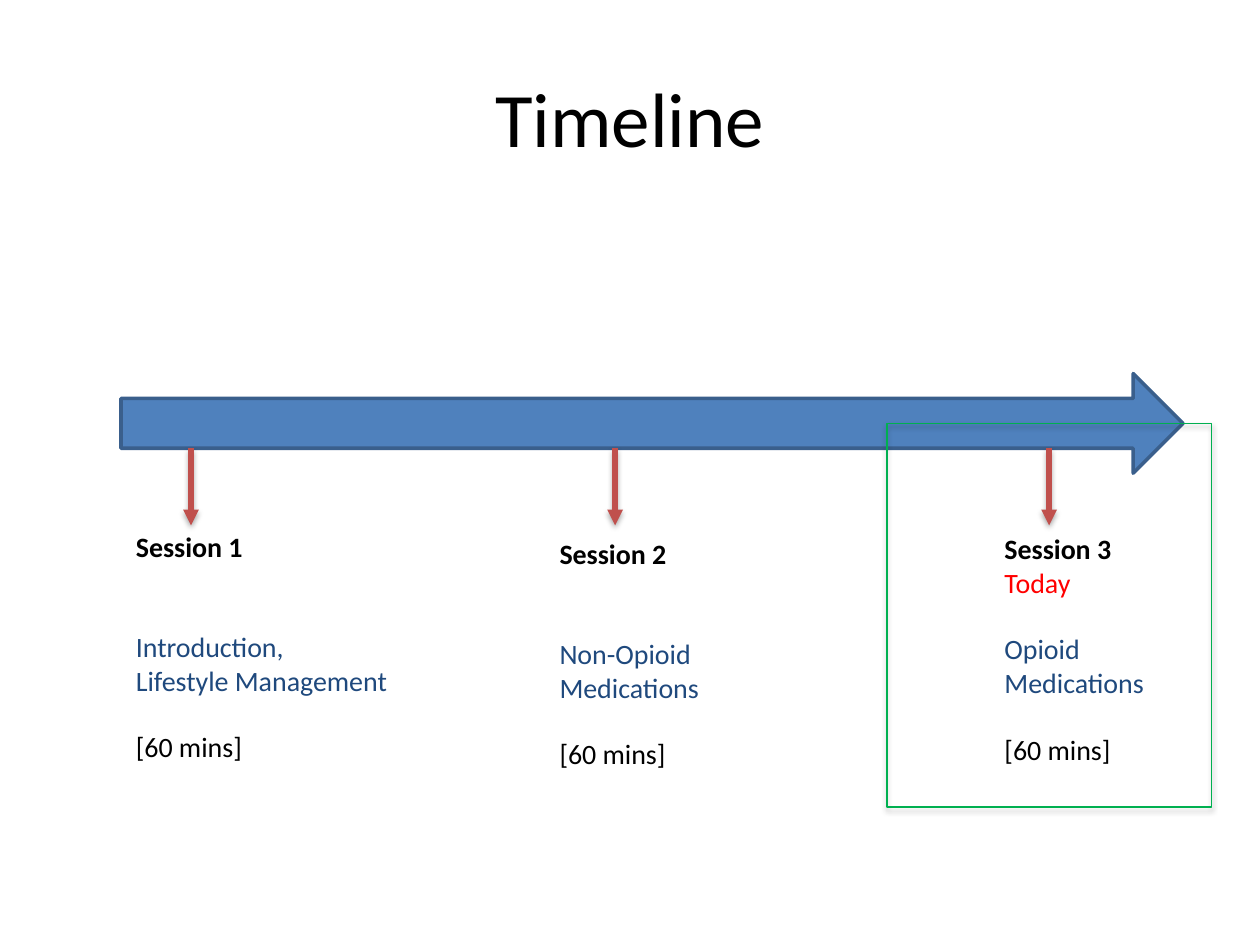
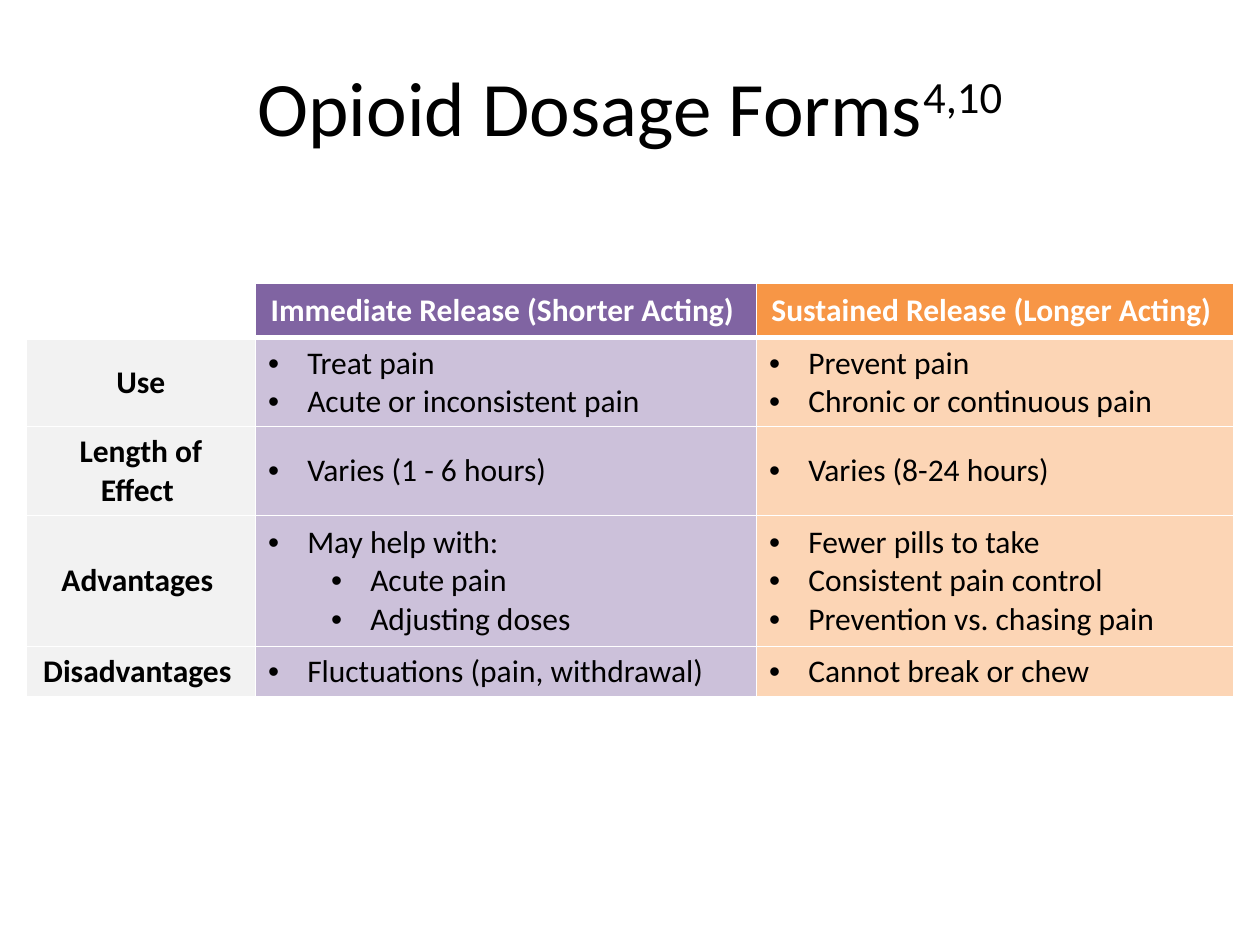
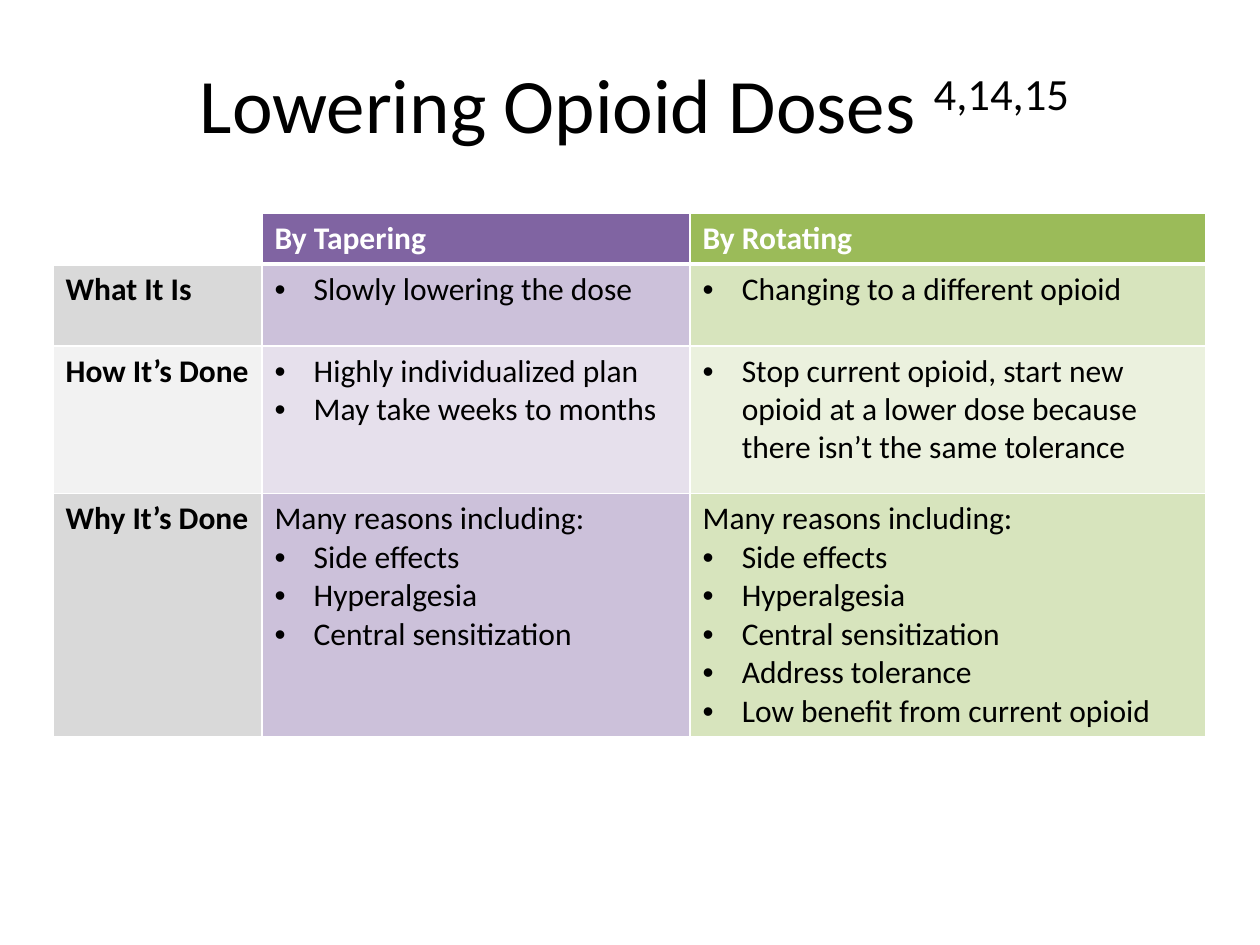
"""Build three slides on opioid treatment: a session timeline and two comparison tables."""
import dataclasses

import lxml.etree
import pptx
import pptx.dml.color
import pptx.enum.shapes
import pptx.enum.text
import pptx.oxml.ns
import pptx.util

Cm = pptx.util.Cm
Pt = pptx.util.Pt
ALIGN = pptx.enum.text.PP_ALIGN
ANCHOR = pptx.enum.text.MSO_ANCHOR
SHAPE = pptx.enum.shapes.MSO_SHAPE
HARD_SPACE = chr(160)


@dataclasses.dataclass(frozen=True)
class Theme:
    font: str = "Calibri"
    title_size: int = 44
    table_size: int = 18
    session_size: int = 16
    line_height: int = 19
    black: str = "000000"
    white: str = "FFFFFF"
    navy: str = "1F497D"
    red: str = "FF0000"
    green: str = "00B050"
    blue: str = "4F81BD"
    blue_edge: str = "3A5F8C"
    marker: str = "C0504D"
    purple: str = "8064A2"
    purple_mid: str = "CCC1DA"
    purple_pale: str = "E6E0EC"
    orange: str = "F79646"
    orange_mid: str = "FCD5B5"
    olive: str = "9BBB59"
    olive_mid: str = "D7E4BD"
    olive_pale: str = "EBF1DE"
    gray_mid: str = "D9D9D9"
    gray_pale: str = "F2F2F2"


THEME = Theme()
PLAIN, BULLET, SUB_BULLET = range(3)
BULLET_MARGIN = {BULLET: Cm(0.79), SUB_BULLET: Cm(2.06)}
BULLET_HANG = Cm(0.79)

TIMELINE_ARROW = (2.44, 7.53, 21.41, 2.01)
TODAY_FRAME = (17.88, 8.54, 6.55, 7.73)
MARKER_TOP, MARKER_BOTTOM = 9.04, 10.59
SESSION_HEIGHT = 5.05

SESSIONS = [
    {"box": (2.49, 10.55, 5.94), "marker": 3.85, "lines": [
        ("Session 1", THEME.black, 0),
        ("Introduction,", THEME.navy, 2),
        ("Lifestyle Management", THEME.navy, 0),
        ("[60 mins]", THEME.black, 1)]},
    {"box": (11.03, 10.69, 3.35), "marker": 12.4, "lines": [
        ("Session 2", THEME.black, 0),
        ("Non-Opioid Medications", THEME.navy, 2),
        ("[60 mins]", THEME.black, 1)]},
    {"box": (20, 10.59, 3.76), "marker": 21.15, "lines": [
        ("Session 3", THEME.black, 0),
        ("Today" + HARD_SPACE, THEME.red, 0),
        ("Opioid Medications", THEME.navy, 1),
        ("[60 mins]", THEME.black, 1)]},
]

DOSAGE_FORMS = {
    "title": ("Opioid Dosage Forms", "4,10"),
    "title_box": (1.27, 0.54, 22.86),
    "corner": (0.53, 5.72),
    "columns": (4.62, 10.1, 9.62),
    "heights": (1.09, 1.79, 1.79, 2.64, 1.02),
    "centered": True,
    "header_fills": (THEME.white, THEME.purple, THEME.orange),
    "band_fills": [(THEME.gray_pale, THEME.purple_mid, THEME.orange_mid)],
    "headers": ("", "Immediate Release (Shorter Acting)" + HARD_SPACE,
                "Sustained Release (Longer Acting)" + HARD_SPACE),
    "rows": [
        ("Use",
         [(BULLET, "Treat pain"), (BULLET, "Acute or inconsistent pain")],
         [(BULLET, "Prevent pain"), (BULLET, "Chronic or continuous pain" + HARD_SPACE)]),
        ("Length of Effect" + HARD_SPACE,
         [(BULLET, "Varies (1 - 6 hours)")],
         [(BULLET, "Varies (8-24 hours)")]),
        ("Advantages" + HARD_SPACE,
         [(BULLET, "May help with:"), (SUB_BULLET, "Acute pain"), (SUB_BULLET, "Adjusting doses")],
         [(BULLET, "Fewer pills to take"), (BULLET, "Consistent pain control"),
          (BULLET, "Prevention vs. chasing pain")]),
        ("Disadvantages" + HARD_SPACE,
         [(BULLET, "Fluctuations (pain, withdrawal)")],
         [(BULLET, "Cannot break or chew")]),
    ],
}

SHARED_REASONS = [(PLAIN, "Many reasons including:"), (BULLET, "Side effects"),
                  (BULLET, "Hyperalgesia"), (BULLET, "Central sensitization")]

LOWERING_DOSES = {
    "title": ("Lowering Opioid Doses ", "4,14,15" + HARD_SPACE),
    "title_box": (1.07, 0.48, 23.65),
    "corner": (1.07, 4.29),
    "columns": (4.21, 8.63, 10.4),
    "heights": (1.03, 1.65, 2.98, 4.9),
    "centered": False,
    "header_fills": (THEME.white, THEME.purple, THEME.olive),
    "band_fills": [(THEME.gray_mid, THEME.purple_mid, THEME.olive_mid),
                   (THEME.gray_pale, THEME.purple_pale, THEME.olive_pale)],
    "headers": ("", "By Tapering", "By Rotating"),
    "rows": [
        ("What It Is",
         [(BULLET, "Slowly lowering the dose")],
         [(BULLET, "Changing to a different opioid")]),
        ("How It’s Done",
         [(BULLET, "Highly individualized plan"), (BULLET, "May take weeks to months")],
         [(BULLET, "Stop current opioid, start new opioid at a lower dose because "
                   "there isn’t the same tolerance")]),
        ("Why It’s Done",
         SHARED_REASONS,
         SHARED_REASONS + [(BULLET, "Address tolerance"),
                           (BULLET, "Low benefit from current opioid")]),
    ],
}


def rgb(color):
    return pptx.dml.color.RGBColor.from_string(color)


def add_child(parent, tag, **attributes):
    child = lxml.etree.SubElement(parent, pptx.oxml.ns.qn(tag))
    for name, value in attributes.items():
        child.set(name, str(value))
    return child


def add_run(paragraph, text, size, color=THEME.black, bold=False):
    run = paragraph.add_run()
    run.text = text
    run.font.name = THEME.font
    run.font.size = Pt(size)
    run.font.bold = bold
    run.font.color.rgb = rgb(color)
    return run


def paragraphs_for(text_frame, items):
    for index, item in enumerate(items):
        yield (text_frame.add_paragraph() if index else text_frame.paragraphs[0]), item


def add_text_box(slide, left, top, width, height):
    text_frame = slide.shapes.add_textbox(Cm(left), Cm(top), Cm(width), Cm(height)).text_frame
    text_frame.word_wrap = True
    return text_frame


def add_title(slide, text, references="", box=(1.27, 0.76, 22.86)):
    text_frame = add_text_box(slide, *box, 3.18)
    text_frame.vertical_anchor = ANCHOR.MIDDLE
    paragraph = text_frame.paragraphs[0]
    paragraph.alignment = ALIGN.CENTER
    add_run(paragraph, text, THEME.title_size)
    if references:
        superscript = add_run(paragraph, references, THEME.title_size)
        superscript._r.get_or_add_rPr().set("baseline", "30000")


def add_shadow(shape):
    effects = add_child(shape._element.spPr, "a:effectLst")
    shadow = add_child(effects, "a:outerShdw", blurRad=40000, dist=23000, dir=5400000, rotWithShape=0)
    add_child(add_child(shadow, "a:srgbClr", val=THEME.black), "a:alpha", val=35000)


def add_outlined_shape(slide, kind, box, color, width):
    shape = slide.shapes.add_shape(kind, *map(Cm, box))
    shape.line.color.rgb = rgb(color)
    shape.line.width = Pt(width)
    return shape


def add_marker(slide, x):
    marker = slide.shapes.add_connector(pptx.enum.shapes.MSO_CONNECTOR.STRAIGHT,
                                        Cm(x), Cm(MARKER_TOP), Cm(x), Cm(MARKER_BOTTOM))
    marker.line.color.rgb = rgb(THEME.marker)
    marker.line.width = Pt(3)
    add_child(marker.line._get_or_add_ln(), "a:tailEnd", type="triangle")
    add_shadow(marker)


def add_session(slide, session):
    add_marker(slide, session["marker"])
    text_frame = add_text_box(slide, *session["box"], SESSION_HEIGHT)
    for paragraph, (text, color, gap_lines) in paragraphs_for(text_frame, session["lines"]):
        paragraph.space_before = Pt(gap_lines * THEME.line_height)
        add_run(paragraph, text, THEME.session_size, color, bold=text.startswith("Session"))


def build_timeline(slide):
    add_title(slide, "Timeline")
    arrow = add_outlined_shape(slide, SHAPE.RIGHT_ARROW, TIMELINE_ARROW, THEME.blue_edge, 2)
    arrow.fill.solid()
    arrow.fill.fore_color.rgb = rgb(THEME.blue)
    arrow.shadow.inherit = False
    for session in SESSIONS:
        add_session(slide, session)
    frame = add_outlined_shape(slide, SHAPE.RECTANGLE, TODAY_FRAME, THEME.green, 0.75)
    frame.fill.background()
    add_shadow(frame)


def set_bullet(paragraph, level):
    paragraph.level = level - 1
    properties = paragraph._p.get_or_add_pPr()
    properties.set("marL", str(BULLET_MARGIN[level]))
    properties.set("indent", str(-BULLET_HANG))
    add_child(properties, "a:buFont", typeface="Arial")
    add_child(properties, "a:buChar", char="•")


def style_cell(cell, fill, top_width, bottom_width):
    properties = cell._tc.get_or_add_tcPr()
    for side, width in (("L", 1), ("R", 1), ("T", top_width), ("B", bottom_width)):
        border = add_child(properties, f"a:ln{side}", w=Pt(width))
        add_child(add_child(border, "a:solidFill"), "a:srgbClr", val=THEME.white)
    cell.fill.solid()
    cell.fill.fore_color.rgb = rgb(fill)


def fill_cell(cell, items, color, bold, alignment):
    for paragraph, (level, text) in paragraphs_for(cell.text_frame, items):
        if level != PLAIN:
            set_bullet(paragraph, level)
        paragraph.alignment = alignment
        if text:
            add_run(paragraph, text, THEME.table_size, color, bold)


def build_comparison(slide, content):
    add_title(slide, *content["title"], box=content["title_box"])
    columns, heights = content["columns"], content["heights"]
    table = slide.shapes.add_table(len(heights), len(columns), *map(Cm, content["corner"]),
                                   Cm(sum(columns)), Cm(sum(heights))).table
    table.horz_banding = False
    for column, width in zip(table.columns, columns):
        column.width = Cm(width)
    for row, height in zip(table.rows, heights):
        row.height = Cm(height)
    bands = content["band_fills"]
    for row_index, row in enumerate([content["headers"], *content["rows"]]):
        is_header = row_index == 0
        fills = content["header_fills"] if is_header else bands[(row_index - 1) % len(bands)]
        for column_index, (entry, fill) in enumerate(zip(row, fills)):
            cell = table.cell(row_index, column_index)
            style_cell(cell, fill, 3 if row_index == 1 else 1, 3 if is_header else 1)
            is_label = isinstance(entry, str)
            if content["centered"]:
                cell.vertical_anchor = ANCHOR.MIDDLE
            fill_cell(cell, [(PLAIN, entry)] if is_label else entry,
                      THEME.white if is_header else THEME.black, is_label,
                      ALIGN.CENTER if is_label and content["centered"] else ALIGN.LEFT)


def main():
    presentation = pptx.Presentation()
    presentation.slide_width, presentation.slide_height = Cm(25.4), Cm(19.05)
    blank = presentation.slide_layouts[6]
    build_timeline(presentation.slides.add_slide(blank))
    for content in (DOSAGE_FORMS, LOWERING_DOSES):
        build_comparison(presentation.slides.add_slide(blank), content)
    presentation.save("out.pptx")


if __name__ == "__main__":
    main()
